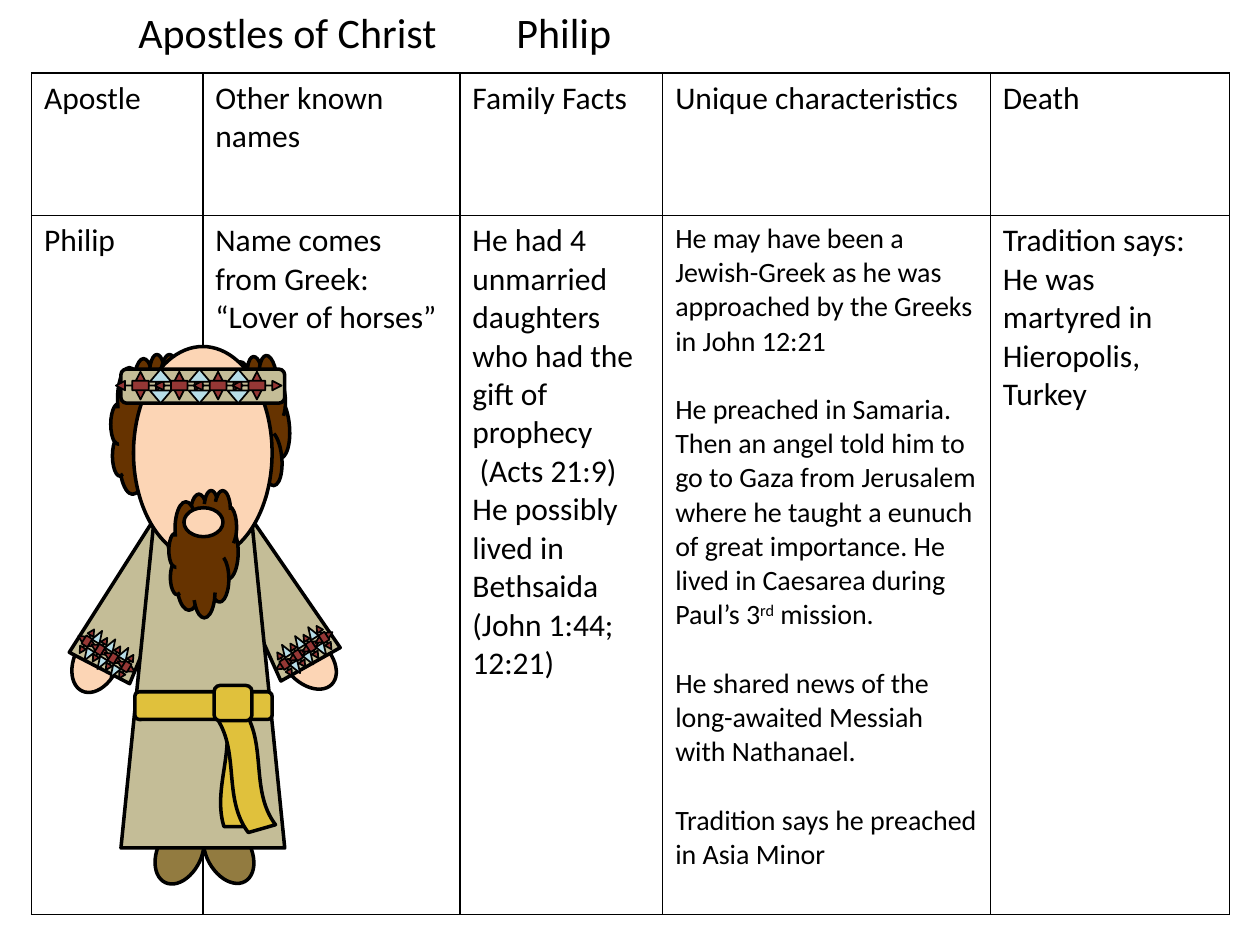
from lxml import etree
from pptx import Presentation
from pptx.dml.color import RGBColor
from pptx.enum.shapes import MSO_SHAPE
from pptx.oxml.ns import qn
from pptx.util import Inches, Pt

OVAL, CLOUD, ROUNDED = MSO_SHAPE.OVAL, MSO_SHAPE.CLOUD, MSO_SHAPE.ROUNDED_RECTANGLE
ROBE, WAVE = MSO_SHAPE.FLOWCHART_MANUAL_OPERATION, MSO_SHAPE.WAVE
STAR, TRIANGLE = MSO_SHAPE.QUAD_ARROW_CALLOUT, MSO_SHAPE.ISOSCELES_TRIANGLE
BLACK, SKIN, HAIR, SHOE = "000000", "FCD5B5", "663300", "927B40"
LINEN, GOLD, RED, BLUE = "C4BD97", "E0C13C", "953735", "B7DEE8"

prs = Presentation()
prs.slide_width, prs.slide_height = Inches(10), Inches(7.5)
U = prs.slide_width // 1000  # grid of 1000 columns by 750 rows
s = prs.slides.add_slide(prs.slide_layouts[6])


def write(p, text, size, gap=0):
    """Fill a paragraph; text between carets is superscript."""
    p.font.size, p.font.name = Pt(size), "Calibri"
    p.font.color.rgb = RGBColor.from_string(BLACK)
    p.space_before = Pt(gap)
    for i, part in enumerate(text.split("^")):
        r = p.add_run()
        r.text = part
        if i % 2:
            r._r.get_or_add_rPr().set("baseline", "30000")


# Table: header and body of each column, with text size and paragraph gap
columns = [
    (136, "Apostle", ["Philip"], 18, 0),
    (204, "Other known names", ["Name comes from Greek: “Lover of horses”"], 18, 0),
    (161, "Family Facts",
     ["He had 4 unmarried daughters who had the gift of prophecy", " (Acts 21:9)",
      "He possibly lived in Bethsaida (John 1:44; 12:21)"], 18, 0),
    (260, "Unique characteristics",
     ["He may have been a Jewish-Greek as he was approached by the Greeks in John 12:21",
      "He preached in Samaria. Then an angel told him to go to Gaza from Jerusalem where "
      "he taught a eunuch of great importance. He lived in Caesarea during Paul’s 3^rd^ mission.",
      "He shared news of the long-awaited Messiah with Nathanael.",
      "Tradition says he preached in Asia Minor"], 16, 19.5),
    (190, "Death", ["Tradition says:", "He was martyred in Hieropolis, Turkey"], 18, 0),
]
table = s.shapes.add_table(2, len(columns), 25 * U, 58 * U, 950 * U, 668 * U).table
table.first_row = table.horz_banding = False
table.rows[0].height, table.rows[1].height = 113 * U, 555 * U
for c, (width, header, body, size, gap) in enumerate(columns):
    table.columns[c].width = width * U
    for row, (lines, pt) in enumerate([([header], 18), (body, size)]):
        cell = table.cell(row, c)
        tf = cell.text_frame
        for i, line in enumerate(lines):
            p = tf.add_paragraph() if i else tf.paragraphs[0]
            write(p, line, pt, gap if i else 0)
        tcPr = cell._tc.get_or_add_tcPr()
        for side in ("lnL", "lnR", "lnT", "lnB"):
            ln = etree.SubElement(tcPr, qn("a:" + side), w=str(Pt(1)))
            fill = etree.SubElement(ln, qn("a:solidFill"))
            etree.SubElement(fill, qn("a:srgbClr"), val=BLACK)
        cell.fill.background()

title = s.shapes.add_textbox(100 * U, 0, 725 * U, 50 * U)
title.text_frame.word_wrap = True
write(title.text_frame.paragraphs[0], "Apostles of Christ\t\tPhilip", 24)

# Figure, back to front: shape, left, top, width, height, rotation, fill
figure = s.shapes.add_group_shape()


def draw(kind, x, y, w, h, angle, color, line=2):
    sp = figure.shapes.add_shape(kind, *(round(v * U) for v in (x, y, w, h)))
    sp.rotation = angle
    sp.shadow.inherit = False
    sp.fill.solid()
    sp.fill.fore_color.rgb = RGBColor.from_string(color)
    sp.line.color.rgb = RGBColor.from_string(BLACK)
    sp.line.width = Pt(line)
    return sp


body_parts = [
    (OVAL, 155, 659, 53, 35, 60.8, SHOE),
    (OVAL, 116, 659, 53, 35, 115.4, SHOE),
    (CLOUD, 169, 283, 61, 118, 355.1, HAIR),
    (CLOUD, 88, 281, 60, 118, 0, HAIR),
    (OVAL, 218, 507, 53, 35, 45.1, SKIN),
    (OVAL, 50, 507, 53, 35, 115.4, SKIN),
    (ROBE, 190, 415, 54, 120, 150.6, LINEN),
    (ROBE, 80, 415, 54, 122, 207.4, LINEN),
    (ROBE, 96, 415, 130, 258, 180, LINEN),
    (ROUNDED, 107, 549, 109, 22, 0, GOLD),
    (OVAL, 132, 365, 55, 103, 0, SKIN),
    (OVAL, 106, 275, 110, 169, 0, SKIN),
    (CLOUD, 134, 389, 55, 101, 0, HAIR),
    (ROUNDED, 96, 293, 130, 27, 0, LINEN),
    (OVAL, 146, 403, 31, 23, 0, SKIN),
    (WAVE, 141, 600, 90, 22, 270, GOLD),
    (WAVE, 146, 596, 97, 30, 254, GOLD),
    (ROUNDED, 170, 544, 30, 28, 0, GOLD),
]
for part in body_parts:
    draw(*part)

# Trim bands: angle, star size, triangle size, step,
# then the first star, upper triangle and lower triangle
trims = [
    (0, (39, 22), (17, 10), (30.8, 0), (92, 295), (119, 293), (119, 310)),
    (31.5, (16, 22), (7, 10), (10.4, 6.7), (61, 498), (75, 500), (66, 515)),
    (327.5, (16, 22), (7, 10), (10.4, -7), (218, 516), (223, 511), (232, 525)),
]
for angle, star, triangle, (dx, dy), *starts in trims:
    rows = [(STAR, 4, star, 0, RED), (TRIANGLE, 3, triangle, 0, BLUE),
            (TRIANGLE, 3, triangle, 180, BLUE)]
    for (x, y), (kind, count, size, turn, color) in zip(starts, rows):
        for i in range(count):
            sp = draw(kind, x + i * dx, y + i * dy, *size, (angle + turn) % 360, color, 1)
            if kind == STAR:
                for k, value in enumerate((0, 0.17, 0.33, 0.48)):
                    sp.adjustments[k] = value

prs.save("out.pptx")
